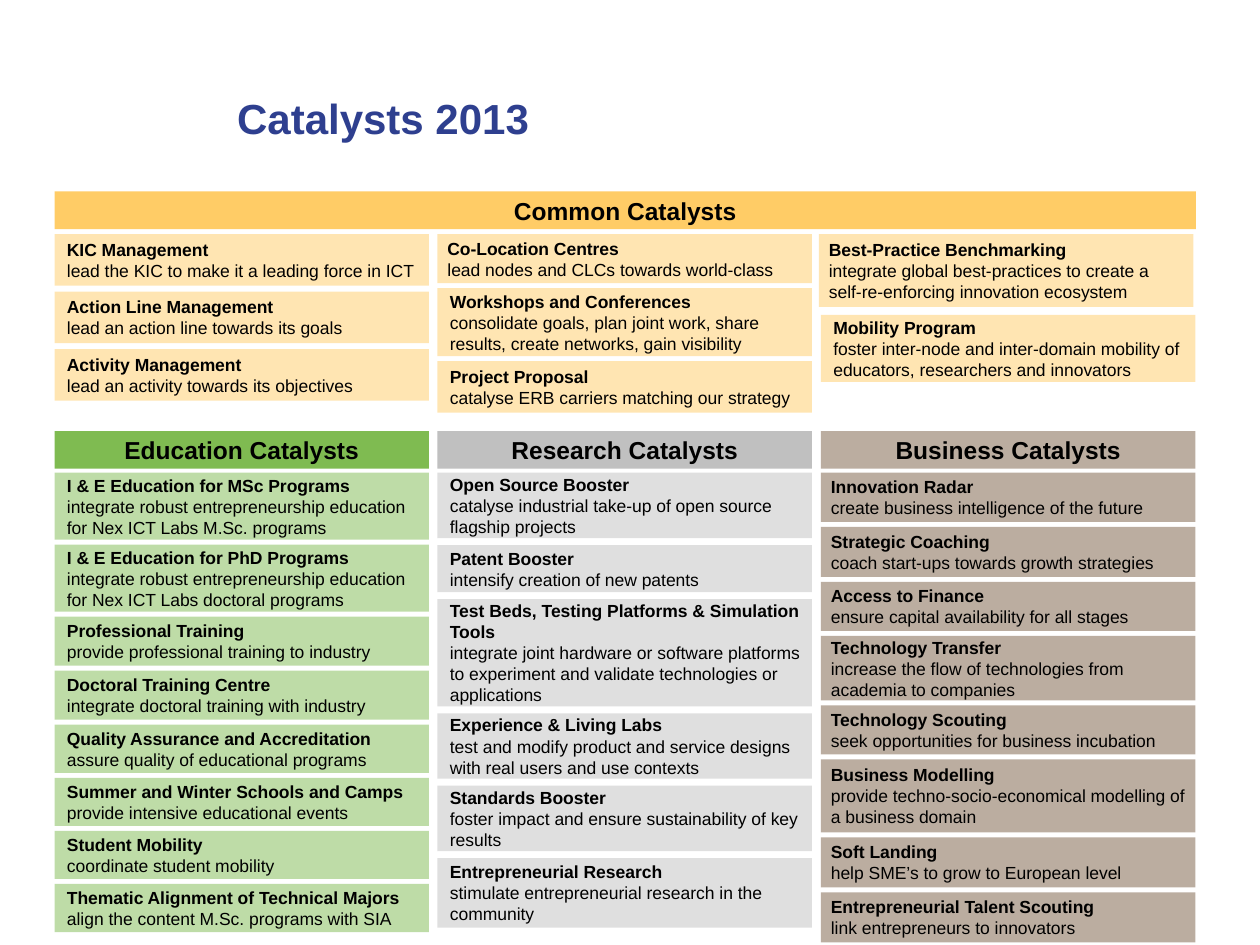
"""Build the Catalysts 2013 overview slide."""
from lxml.etree import SubElement
from pptx import Presentation
from pptx.dml.color import RGBColor
from pptx.enum.shapes import MSO_SHAPE as Shape
from pptx.enum.text import MSO_ANCHOR as Anchor, PP_ALIGN as Align
from pptx.oxml.ns import qn
from pptx.util import Cm, Pt

LEFT, MIDDLE, RIGHT = 1.1, 8.82, 16.55
COLUMN, FULL = 7.55, 23.01
COMMON_TOP, COMMON_CARDS, GROUP_TOP, GROUP_CARDS = 3.86, 4.72, 8.69, 9.53
AMBER, GREEN, GREY, TAUPE = "FFCC66", "7FBB51", "C0C0C0", "BBADA0"
WIDE, NARROW = 0.25, 0.2

MANAGEMENT = [
    (1.04, "KIC Management", "lead the KIC to make it a leading force in ICT"),
    (1.04, "Action Line Management", "lead an action line towards its goals"),
    (1.04, "Activity Management", "lead an activity towards its objectives"),
]
CENTRES = [(0.99, "Co-Location Centres", "lead nodes and CLCs towards world-class")]
WORKSHOPS = [(1.37, "Workshops and Conferences",
              "consolidate goals, plan joint work, share results, create networks, gain visibility")]
PROPOSAL = [(1.04, "Project Proposal", "catalyse ERB carriers matching our strategy")]
BENCHMARKING = [(1.47, "Best-Practice Benchmarking",
                 "integrate global best-practices to create a self-re-enforcing innovation ecosystem")]
MOBILITY = [(1.35, "Mobility Program",
             "foster inter-node and inter-domain mobility of educators, researchers and innovators")]
EDUCATION = [
    (1.35, "I & E Education for MSc Programs",
     "integrate robust entrepreneurship education for Nex ICT Labs M.Sc. programs"),
    (1.35, "I & E Education for PhD Programs",
     "integrate robust entrepreneurship education for Nex ICT Labs doctoral programs"),
    (0.99, "Professional Training", "provide professional training to industry"),
    (0.99, "Doctoral Training Centre", "integrate doctoral training with industry"),
    (0.97, "Quality Assurance and Accreditation", "assure quality of educational programs"),
    (0.97, "Summer and Winter Schools and Camps", "provide intensive educational events"),
    (0.97, "Student Mobility", "coordinate student mobility"),
    (0.97, "Thematic Alignment of Technical Majors", "align the content M.Sc. programs with SIA"),
]
RESEARCH = [
    (1.32, "Open Source Booster", "catalyse industrial take-up of open source flagship projects"),
    (0.95, "Patent Booster", "intensify creation of new patents"),
    (2.16, "Test Beds, Testing Platforms & Simulation Tools",
     "integrate joint hardware or software platforms to experiment and validate "
     "technologies or applications"),
    (1.32, "Experience & Living Labs",
     "test and modify product and service designs with real users and use contexts"),
    (1.32, "Standards Booster", "foster impact and ensure sustainability of key results"),
    (1.4, "Entrepreneurial Research", "stimulate entrepreneurial research in the community"),
]
BUSINESS = [
    (0.99, "Innovation Radar", "create business intelligence of the future"),
    (1.01, "Strategic Coaching", "coach start-ups towards growth strategies"),
    (0.99, "Access to Finance", "ensure capital availability for all stages"),
    (1.3, "Technology Transfer", "increase the flow of technologies from academia to companies"),
    (0.99, "Technology Scouting", "seek opportunities for business incubation"),
    (1.47, "Business Modelling", "provide techno-socio-economical modelling of a business domain"),
    (1.01, "Soft Landing", "help SME’s to grow to European level"),
    (1.01, "Entrepreneurial Talent Scouting", "link entrepreneurs to innovators"),
]


def color(value):
    return RGBColor.from_string(value)


class CatalystPage:
    def __init__(self, page, font="Arial", ink="000000"):
        self.page, self.font, self.ink = page, font, ink

    def style(self, para, size, ink=None):
        para.font.name, para.font.size = self.font, Pt(size)
        para.font.color.rgb = color(ink or self.ink)

    def frame(self, box, inset, edge):
        frame = box.text_frame
        frame.word_wrap, frame.vertical_anchor = True, Anchor.MIDDLE
        frame.margin_left = frame.margin_right = Cm(inset)
        frame.margin_top = frame.margin_bottom = Cm(edge)
        return frame

    def title(self, text, left, top, width, height):
        box = self.page.shapes.add_textbox(Cm(left), Cm(top), Cm(width), Cm(height))
        para = self.frame(box, 0, 0).paragraphs[0]
        span = para.add_run()
        span.text = text
        self.style(para, 24, "2E3F8F")
        para.font.bold = True
        effects = SubElement(span.font._element, qn("a:effectLst"))
        shadow = SubElement(effects, qn("a:outerShdw"), dist="25400", dir="2700000")
        SubElement(shadow, qn("a:srgbClr"), val="C0DDA8")

    def block(self, left, top, width, height, fill, inset=WIDE, opacity=100):
        box = self.page.shapes.add_shape(Shape.RECTANGLE, Cm(left), Cm(top), Cm(width), Cm(height))
        box.shadow.inherit = False
        box.line.fill.background()
        box.fill.solid()
        box.fill.fore_color.rgb = color(fill)
        if opacity < 100:
            tint = box.fill._xPr.find(".//" + qn("a:srgbClr"))
            SubElement(tint, qn("a:alpha"), val=str(opacity * 1000))
        return self.frame(box, inset, 0.13)

    def header(self, text, left, top, width, fill):
        para = self.block(left, top, width, 0.76, fill).paragraphs[0]
        para.text, para.alignment = text, Align.CENTER
        self.style(para, 14)
        para.font.bold = True

    def card(self, frame, heading, body, split, after):
        first = frame.paragraphs[0]
        span = first.add_run()
        span.text, span.font.bold = heading, True
        if split:
            last = frame.add_paragraph()
        else:
            last = first
            first.add_line_break()
        span = last.add_run()
        span.text, span.font.bold = body, False
        for para in frame.paragraphs:
            para.alignment, para.space_after = Align.LEFT, Pt(after)
            self.style(para, 10)

    def stack(self, cards, left, top, fill, gap=0.1, inset=WIDE, split=False, opacity=50):
        for height, heading, body in cards:
            frame = self.block(left, top, COLUMN, height, fill, inset, opacity)
            self.card(frame, heading, body, split, 10 if inset == NARROW else 0)
            top += height + gap
        return top


def main():
    deck = Presentation()
    deck.slide_width, deck.slide_height = Cm(25.4), Cm(19.05)
    page = CatalystPage(deck.slides.add_slide(deck.slide_layouts[6]))
    page.title("Catalysts 2013", 4.78, 1.22, 8.79, 2.31)

    page.header("Common Catalysts", LEFT, COMMON_TOP, FULL, AMBER)
    page.stack(MANAGEMENT, LEFT, COMMON_CARDS, AMBER, gap=0.12, split=True)
    top = page.stack(CENTRES, MIDDLE, COMMON_CARDS, AMBER, inset=NARROW)
    top = page.stack(WORKSHOPS, MIDDLE, top, AMBER)
    page.stack(PROPOSAL, MIDDLE, top, AMBER, split=True)
    top = page.stack(BENCHMARKING, RIGHT - 0.04, COMMON_CARDS, AMBER, gap=0.16, inset=NARROW)
    page.stack(MOBILITY, RIGHT, top, AMBER, split=True)

    page.header("Education Catalysts", LEFT, GROUP_TOP, COLUMN, GREEN)
    page.stack(EDUCATION, LEFT, GROUP_CARDS, GREEN)
    page.header("Research Catalysts", MIDDLE, GROUP_TOP, COLUMN, GREY)
    page.stack(RESEARCH, MIDDLE, GROUP_CARDS, GREY, gap=0.14)
    page.header("Business Catalysts", RIGHT, GROUP_TOP, COLUMN, TAUPE)
    page.stack(BUSINESS, RIGHT, GROUP_CARDS, TAUPE, inset=NARROW, opacity=100)
    deck.save("out.pptx")


if __name__ == "__main__":
    main()
